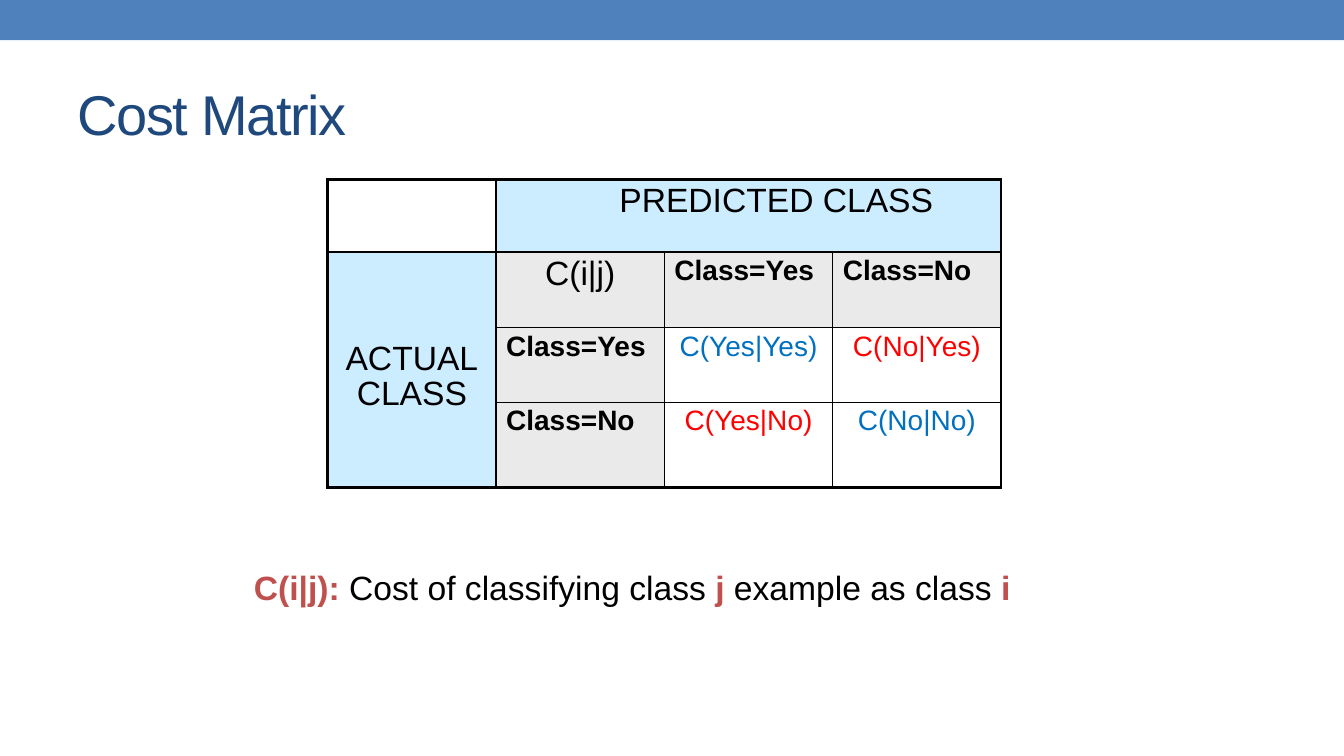
import pptx
import pptx.util
import pptx.dml.color
import pptx.enum.shapes
import pptx.enum.text
import pptx.oxml
import pptx.oxml.ns

Inches = pptx.util.Inches
Pt = pptx.util.Pt
ALIGN = pptx.enum.text.PP_ALIGN
ANCHOR = pptx.enum.text.MSO_ANCHOR

COLORS = {
    "bar": "4F81BD", "title": "1F497D", "text": "000000", "accent": "C0504D",
    "heading": "CCECFF", "label": "EAEAEA", "right": "0070C0", "wrong": "FF0000",
}
TITLE = "Cost Matrix"
DEFINITION = [
    ("C(i|j): ", True),
    ("Cost of classifying class ", False),
    ("j", True),
    (" example as class ", False),
    ("i", True),
]
HEADING = {"size": 24, "align": ALIGN.CENTER}
LABEL = {"size": 20, "bold": True}
RIGHT = {"size": 20, "color": "right", "align": ALIGN.CENTER}
WRONG = {"size": 20, "color": "wrong", "align": ALIGN.CENTER}
MATRIX = [
    [None, ("PREDICTED CLASS", "heading", HEADING), None, None],
    [("ACTUAL\nCLASS", "heading", HEADING), ("C(i|j)", "label", HEADING),
     ("Class=Yes", "label", LABEL), ("Class=No", "label", LABEL)],
    [None, ("Class=Yes", "label", LABEL),
     ("C(Yes|Yes)", None, RIGHT), ("C(No|Yes)", None, WRONG)],
    [None, ("Class=No", "label", LABEL),
     ("C(Yes|No)", None, WRONG), ("C(No|No)", None, RIGHT)],
]
ROW_HEIGHTS = [0.72, 0.75, 0.74, 0.85]
COLUMN_WIDTH = 1.67
THIN, THICK = 1, 2.25


def rgb(name):
    return pptx.dml.color.RGBColor.from_string(COLORS[name])


def write(para, text, size=24, color="text", bold=False, align=ALIGN.LEFT, tracking=None):
    para.alignment = align
    for index, line in enumerate(text.split("\n")):
        if index:
            para.add_line_break()
        span = para.add_run()
        span.text = line
        span.font.name = "Arial"
        span.font.size = Pt(size)
        span.font.bold = bold
        span.font.color.rgb = rgb(color)
        if tracking is not None:
            span.font._element.set("spc", str(tracking * 100))


def add_text_box(page, left, top, width, height, anchor):
    box = page.shapes.add_textbox(Inches(left), Inches(top), Inches(width), Inches(height))
    box.text_frame.word_wrap = True
    box.text_frame.vertical_anchor = anchor
    return box.text_frame.paragraphs[0]


def set_borders(cell, widths):
    properties = cell._tc.get_or_add_tcPr()
    for side, width in zip("LRTB", widths):
        properties.append(pptx.oxml.parse_xml(
            f'<a:ln{side} {pptx.oxml.ns.nsdecls("a")} w="{int(Pt(width))}">'
            f'<a:solidFill><a:srgbClr val="{COLORS["text"]}"/></a:solidFill></a:ln{side}>'))


def add_matrix(page):
    count = len(MATRIX)
    table = page.shapes.add_table(
        count, count, Inches(3.25), Inches(1.78),
        Inches(COLUMN_WIDTH * count), Inches(sum(ROW_HEIGHTS))).table
    table.first_row = table.horz_banding = False
    for column in table.columns:
        column.width = Inches(COLUMN_WIDTH)
    for row, height in zip(table.rows, ROW_HEIGHTS):
        row.height = Inches(height)
    table.cell(0, 1).merge(table.cell(0, 3))
    table.cell(1, 0).merge(table.cell(3, 0))

    for i, entries in enumerate(MATRIX):
        for j, entry in enumerate(entries):
            cell = table.cell(i, j)
            bottom = i + (cell.span_height if cell.is_merge_origin else 1)
            right = j + (cell.span_width if cell.is_merge_origin else 1)
            outer = (j == 0, right == count, i == 0, bottom == count)
            set_borders(cell, [THICK if edge else THIN for edge in outer])
            text, fill, style = entry or ("", None, {})
            if fill:
                cell.fill.solid()
                cell.fill.fore_color.rgb = rgb(fill)
            else:
                cell.fill.background()
            if text:
                para = cell.text_frame.paragraphs[0]
                para.line_spacing = 0.95
                para.space_before = Pt(style["size"] * 0.1)
                para.space_after = Pt(4)
                write(para, text, **style)
    table.cell(0, 1).margin_left = Inches(0.65)
    table.cell(1, 0).margin_top = Inches(0.89)


def main():
    deck = pptx.Presentation()
    deck.slide_width, deck.slide_height = Inches(13.33), Inches(7.5)
    page = deck.slides.add_slide(deck.slide_layouts[6])

    bar = page.shapes.add_shape(
        pptx.enum.shapes.MSO_SHAPE.RECTANGLE, 0, 0, deck.slide_width, Inches(0.4))
    bar.shadow.inherit = False
    bar.fill.solid()
    bar.fill.fore_color.rgb = rgb("bar")
    bar.line.fill.background()

    title = add_text_box(page, 0.67, 0.58, 12, 1.08, ANCHOR.MIDDLE)
    write(title, TITLE, size=40, color="title", tracking=-1)

    add_matrix(page)

    definition = add_text_box(page, 2.42, 5.58, 8.58, 1, ANCHOR.TOP)
    definition.space_before = Pt(12)
    indent = definition._p.get_or_add_pPr()
    indent.set("marL", str(int(Inches(0.32))))
    indent.set("indent", str(int(Inches(-0.32))))
    for text, strong in DEFINITION:
        write(definition, text, bold=strong, color="accent" if strong else "text")

    deck.save("out.pptx")


if __name__ == "__main__":
    main()
